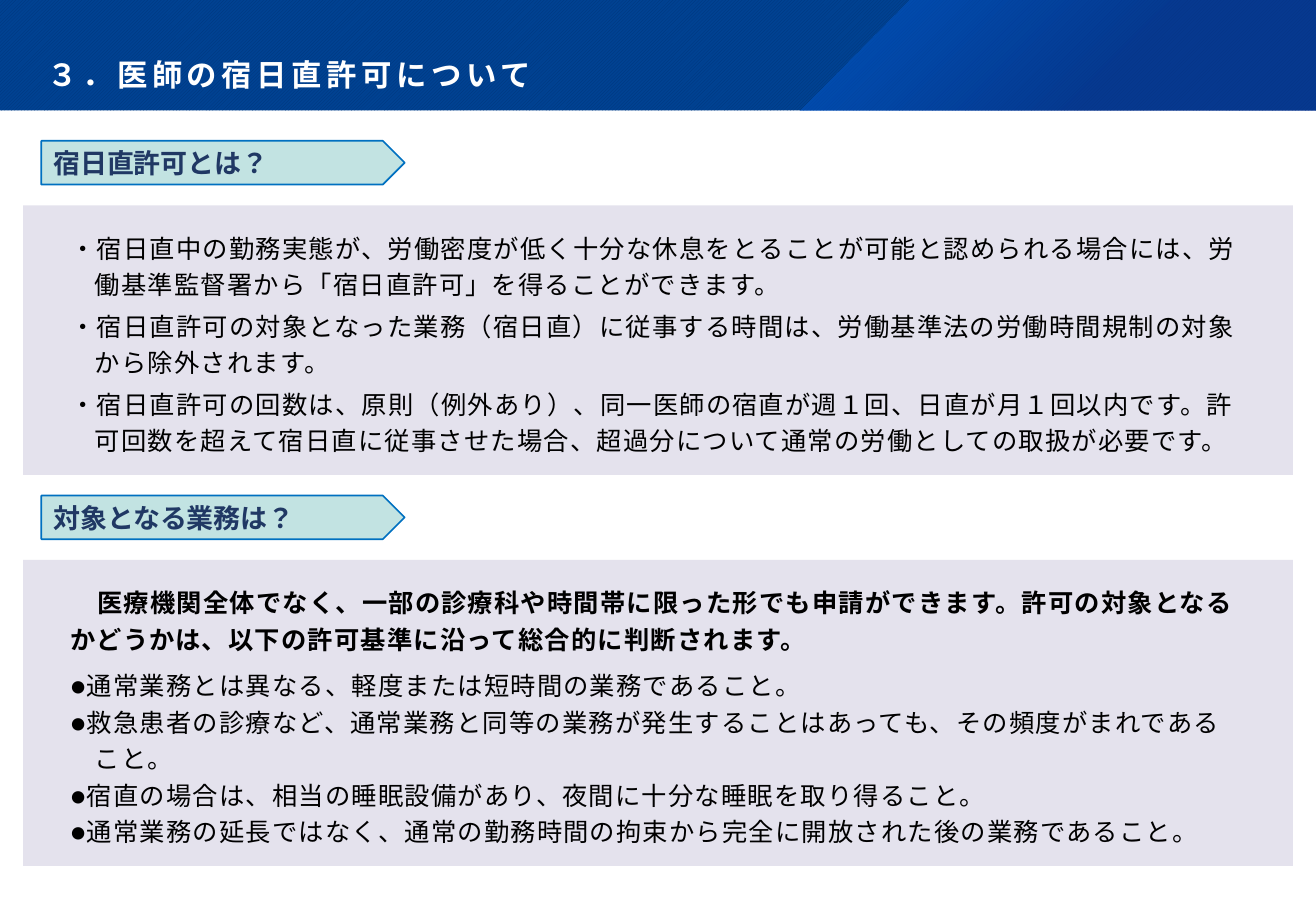
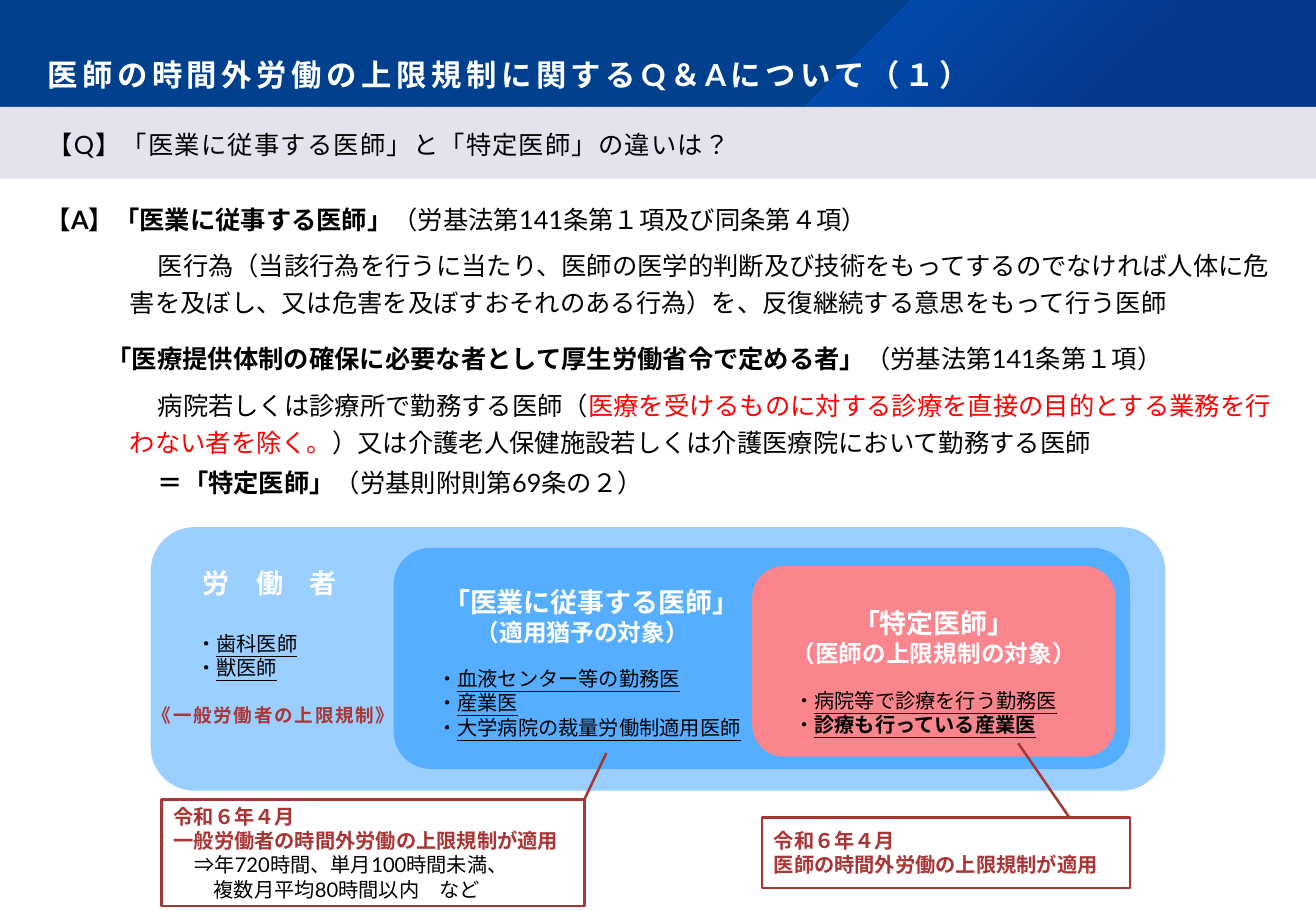
import dataclasses
import typing

import pptx
import pptx.dml.color
import pptx.enum.dml
import pptx.enum.shapes
import pptx.enum.text
import pptx.oxml
import pptx.oxml.ns
import pptx.util

Inches = pptx.util.Inches
Pt = pptx.util.Pt
qn = pptx.oxml.ns.qn
Kind = pptx.enum.shapes.MSO_SHAPE
Anchor = pptx.enum.text.MSO_ANCHOR
Align = pptx.enum.text.PP_ALIGN

WIDE, HIGH, BAND = 10.83, 7.5, 0.91
LATO, NOTO = "Lato", "Noto Sans CJK JP"
COLORS = {
    "white": "FFFFFF", "black": "000000", "navy": "004292", "stripe": "003579",
    "glow": "0064DF", "deep": "0C338E", "panel": "E4E2ED", "mint": "C2E3E2",
    "blue": "0070C0", "ink": "203864", "pale": "36A0FF", "sky": "118EFF",
    "pink": "FB858D", "wine": "A93535", "red": "FF0000",
}


@dataclasses.dataclass
class Run:
    text: str
    bold: typing.Optional[bool] = None
    color: str = ""
    under: bool = False


@dataclasses.dataclass
class Para:
    runs: typing.Union[str, list[Run]]
    size: float = 15
    color: str = "black"
    bold: bool = False
    font: str = LATO
    track: float = 0  # letter spacing in points
    left: float = 0
    first: float = 0
    before: float = 0
    after: float = 0
    line: float = 1
    align: Align = Align.LEFT


@dataclasses.dataclass
class Box:
    at: tuple[float, float, float, float]
    paras: list[Para]
    kind: Kind = Kind.RECTANGLE
    fill: str = ""
    alpha: int = 100
    edge: str = ""
    weight: float = 1.5
    anchor: Anchor = Anchor.MIDDLE
    inset: tuple[float, float, float, float] = (0.1, 0.05, 0.1, 0.05)


def rgb(name: str) -> pptx.dml.color.RGBColor:
    return pptx.dml.color.RGBColor.from_string(COLORS[name])


def add_para(para, data: Para) -> None:
    para.alignment = data.align
    para.line_spacing = data.line
    para.space_before, para.space_after = Pt(data.before), Pt(data.after)
    props = para._p.get_or_add_pPr()
    props.set("marL", str(Inches(data.left)))
    props.set("indent", str(Inches(data.first)))
    font = para.font
    font.name, font.size, font.bold = data.font, Pt(data.size), data.bold
    font.color.rgb = rgb(data.color)
    runs = [Run(data.runs)] if isinstance(data.runs, str) else data.runs
    for item in runs:
        run = para.add_run()
        run.text = item.text
        if item.bold is not None:
            run.font.bold = item.bold
        if item.color:
            run.font.color.rgb = rgb(item.color)
        if item.under:
            run.font.underline = True
        mark = run._r.get_or_add_rPr()
        mark.set("lang", "ja-JP")
        if data.track:
            mark.set("spc", str(round(data.track * 100)))
        east = mark.makeelement(qn("a:ea"), {"typeface": data.font})
        mark.append(east)


def add_box(slide, box: Box) -> None:
    shape = slide.shapes.add_shape(box.kind, *map(Inches, box.at))
    shape.shadow.inherit = False
    if box.fill:
        shape.fill.solid()
        shape.fill.fore_color.rgb = rgb(box.fill)
        if box.alpha < 100:
            tint = shape._element.spPr.find(qn("a:solidFill"))[0]
            tint.append(tint.makeelement(qn("a:alpha"), {"val": str(box.alpha * 1000)}))
    else:
        shape.fill.background()
    if box.edge:
        shape.line.color.rgb = rgb(box.edge)
        shape.line.width = Pt(box.weight)
    else:
        shape.line.fill.background()
    frame = shape.text_frame
    frame.word_wrap = True
    frame.vertical_anchor = box.anchor
    (frame.margin_left, frame.margin_top,
     frame.margin_right, frame.margin_bottom) = map(Inches, box.inset)
    for i, data in enumerate(box.paras):
        add_para(frame.add_paragraph() if i else frame.paragraphs[0], data)


def add_line(slide, start: tuple[float, float], end: tuple[float, float]) -> None:
    line = slide.shapes.add_connector(
        pptx.enum.shapes.MSO_CONNECTOR.STRAIGHT, *map(Inches, (*start, *end)))
    line.line.color.rgb = rgb("wine")
    line.line.width = Pt(1.5)
    props = line._element.spPr
    props.append(props.makeelement(qn("a:effectLst"), {}))


def add_head(slide, title: str) -> None:
    # Striped band
    band = slide.shapes.add_shape(
        Kind.RECTANGLE, 0, 0, Inches(WIDE), Inches(BAND))
    band.shadow.inherit = False
    band.fill.patterned()
    band.fill.pattern = pptx.enum.dml.MSO_PATTERN.DARK_UPWARD_DIAGONAL
    band.fill.fore_color.rgb = rgb("stripe")
    band.fill.back_color.rgb = rgb("navy")
    band.line.fill.background()
    # Slanted glow
    pen = slide.shapes.build_freeform(Inches(7.49), 0)
    pen.add_line_segments([(Inches(x), Inches(y)) for x, y in
                           ((WIDE, 0), (WIDE, BAND), (6.58, BAND))])
    glow = pen.convert_to_shape()
    glow.shadow.inherit = False
    glow.line.fill.background()
    glow.fill.background()
    stops = "".join(
        f'<a:gs pos="{pos}000"><a:srgbClr val="{COLORS[name]}">'
        f'<a:alpha val="{alpha}000"/></a:srgbClr></a:gs>'
        for pos, name, alpha in ((0, "glow", 50), (62, "deep", 55)))
    grad = pptx.oxml.parse_xml(
        f'<a:gradFill {pptx.oxml.ns.nsdecls("a")}><a:gsLst>{stops}</a:gsLst>'
        '<a:path path="circle"><a:fillToRect r="100000" b="100000"/></a:path>'
        '</a:gradFill>')
    props = glow._element.spPr
    props.replace(props.find(qn("a:noFill")), grad)
    # Title
    text = Para(title, 18, "white", True, track=2.7, line=0.9)
    add_box(slide, Box((0, 0, WIDE, BAND), [text], anchor=Anchor.BOTTOM,
                       inset=(0.39, 0.36, 0.36, 0.14)))


def panel(at: tuple[float, float, float, float], paras: list[Para]) -> Box:
    return Box(at, paras, fill="panel", anchor=Anchor.BOTTOM,
               inset=(0.39, 0.16, 0.39, 0.16))


def tag(top: float, text: str) -> Box:
    return Box((0.34, top, 2.99, 0.36), [Para(text, 16, "ink", True, NOTO)],
               Kind.PENTAGON, "mint", edge="blue", weight=1)


def body(runs, **more) -> Para:
    return Para(runs, track=0.7, line=1.2, **more)


def item(text: str, before: float = 0, bold: bool = False) -> Para:
    return Para([Run("・"), Run(text, bold, under=True)], 12, left=0.17, before=before)


def note(text: str) -> Para:
    return Para(text, 12, "wine", True)


def permit(slide) -> None:
    add_head(slide, "３．医師の宿日直許可について")
    facts = [
        "・宿日直中の勤務実態が、労働密度が低く十分な休息をとることが可能と認められる場合には、労働基準監督署から「宿日直許可」を得ることができます。",
        "・宿日直許可の対象となった業務（宿日直）に従事する時間は、労働基準法の労働時間規制の対象から除外されます。",
        "・宿日直許可の回数は、原則（例外あり）、同一医師の宿直が週１回、日直が月１回以内です。許可回数を超えて宿日直に従事させた場合、超過分について通常の労働としての取扱が必要です。",
    ]
    rules = [
        "●通常業務とは異なる、軽度または短時間の業務であること。",
        "●救急患者の診療など、通常業務と同等の業務が発生することはあっても、その頻度がまれであること。",
        "●宿直の場合は、相当の睡眠設備があり、夜間に十分な睡眠を取り得ること。",
        "●通常業務の延長ではなく、通常の勤務時間の拘束から完全に開放された後の業務であること。",
    ]
    lead = body("医療機関全体でなく、一部の診療科や時間帯に限った形でも申請ができます。許可の対象となるかどうかは、以下の許可基準に沿って総合的に判断されます。",
                bold=True, first=0.22)
    hang = {"left": 0.2, "first": -0.2}
    for box in (
        panel((0.19, 1.69, 10.45, 2.22), [body(t, before=3, **hang) for t in facts]),
        tag(1.16, "宿日直許可とは？"),
        tag(4.08, "対象となる業務は？"),
        panel((0.19, 4.61, 10.45, 2.52),
              [lead] + [body(t, before=0 if i else 6, **hang)
                        for i, t in enumerate(rules)]),
    ):
        add_box(slide, box)


def answer(slide) -> None:
    add_head(slide, "医師の時間外労働の上限規制に関するQ＆Aについて（１）")
    add_box(slide, panel((0, 0.88, WIDE, 0.59), [
        Para("【Q】「医業に従事する医師」と「特定医師」の違いは？", track=0.7)]))

    # Nested groups of workers
    oval = Kind.FLOWCHART_ALTERNATE_PROCESS
    drop = (0.1, 0.22, 0.1, 0.05)
    add_box(slide, Box((1.24, 4.34, 8.35, 2.17), [
        Para("労　働　者", 16, "white", True, left=0.22),
        item("歯科医師", 19), item("獣医師"),
    ], oval, "pale", 50, anchor=Anchor.TOP, inset=drop))
    add_box(slide, Box((3.24, 4.51, 6.06, 1.82), [
        Para("「医業に従事する医師」", 16, "white", True, left=0.22),
        Para("（適用猶予の対象）", 14, "white", True, left=0.49),
        item("血液センター等の勤務医", 12), item("産業医"),
        item("大学病院の裁量労働制適用医師"),
    ], oval, "sky", 50, anchor=Anchor.TOP, inset=drop))
    add_box(slide, Box((6.19, 4.66, 2.99, 1.57), [
        Para("「特定医師」", 16, "white", True, align=Align.CENTER),
        Para("（医師の上限規制の対象）", 14, "white", True, align=Align.CENTER),
        item("病院等で診療を行う勤務医", 12), item("診療も行っている産業医", bold=True),
    ], oval, "pink", inset=drop))

    # Answer text
    deep = {"left": 0.69, "first": 0.23, "after": 6, "line": 1.2}
    add_box(slide, Box((0.28, 1.58, 10.37, 2.59), [
        Para([Run("【A】「医業に従事する医師」", True),
              Run("（労基法第141条第１項及び同条第４項）")], after=6, line=1.2),
        Para("医行為（当該行為を行うに当たり、医師の医学的判断及び技術をもってするのでなければ人体に危害を及ぼし、又は危害を及ぼすおそれのある行為）を、反復継続する意思をもって行う医師", **deep),
        Para([Run("「医療提供体制の確保に必要な者として厚生労働省令で定める者」", True),
              Run("（労基法第141条第１項）")], left=0.5, before=6, after=6, line=1.2),
        Para([Run("病院若しくは診療所で勤務する医師（"),
              Run("医療を受けるものに対する診療を直接の目的とする業務を行わない者を除く。", color="red"),
              Run("）又は介護老人保健施設若しくは介護医療院において勤務する医師")], **deep),
        Para([Run("＝「特定医師」", True), Run("（労基則附則第69条の２）")], left=0.92),
    ], anchor=Anchor.TOP))

    # Limits and callouts
    add_box(slide, Box((1.16, 5.75, 2.24, 0.29), [
        Para("《一般労働者の上限規制》", 11, "wine", True, NOTO, 1)], anchor=Anchor.TOP))
    add_box(slide, Box((1.33, 6.58, 3.48, 0.88), [
        note("令和６年４月"), note("一般労働者の時間外労働の上限規制が適用"),
        Para("⇒年720時間、単月100時間未満、", 12, left=0.17),
        Para("複数月平均80時間以内　など", 12, left=0.33),
    ], edge="wine"))
    add_line(slide, (4.99, 6.2), (4.81, 6.58))
    add_box(slide, Box((6.27, 6.73, 3.03, 0.58), [
        note("令和６年４月"), note("医師の時間外労働の上限規制が適用")], edge="wine"))
    add_line(slide, (8.38, 6.12), (8.8, 6.73))


def main() -> None:
    deck = pptx.Presentation()
    deck.slide_width, deck.slide_height = Inches(WIDE), Inches(HIGH)
    for draw in (permit, answer):
        draw(deck.slides.add_slide(deck.slide_layouts[6]))
    deck.save("out.pptx")


if __name__ == "__main__":
    main()
